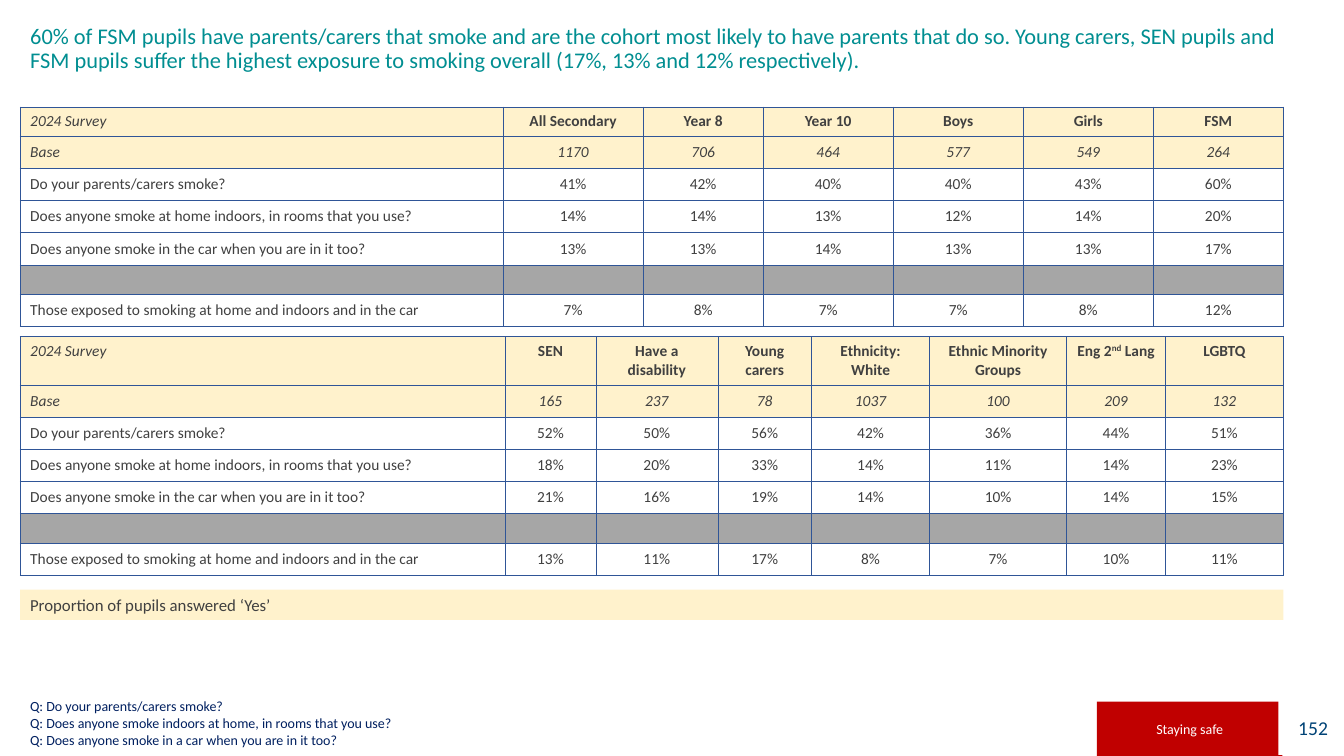
import pptx
import pptx.util
import pptx.dml.color
import pptx.enum.shapes
import pptx.enum.text
import pptx.oxml.ns
from lxml import etree

ALIGN = pptx.enum.text.PP_ALIGN
ANCHOR = pptx.enum.text.MSO_ANCHOR
qn = pptx.oxml.ns.qn
Inches = pptx.util.Inches

# Content
HEADLINE = ("60% of FSM pupils have parents/carers that smoke and are the cohort most likely to have "
            "parents that do so. Young carers, SEN pupils and FSM pupils suffer the highest exposure "
            "to smoking overall (17%, 13% and 12% respectively).")
ROW_LABELS = [
    "Base",
    "Do your parents/carers smoke?",
    "Does anyone smoke at home indoors, in rooms that you use?",
    "Does anyone smoke in the car when you are in it too?",
    None,  # grey separator row
    "Those exposed to smoking at home and indoors and in the car",
]
# Each column: heading, width, base, three answers, exposed overall
YEAR_GROUPS = [
    ("All Secondary", 1.39, 1170, 41, 14, 13, 7),
    ("Year 8", 1.19, 706, 42, 14, 13, 8),
    ("Year 10", 1.29, 464, 40, 13, 14, 7),
    ("Boys", 1.29, 577, 40, 12, 13, 7),
    ("Girls", 1.29, 549, 43, 14, 13, 8),
    ("FSM", 1.29, 264, 60, 20, 17, 12),
]
COHORTS = [
    ("SEN", 0.9, 165, 52, 18, 21, 13),
    ("Have a disability", 1.21, 237, 50, 20, 16, 11),
    ("Young carers", 0.93, 78, 56, 33, 19, 17),
    ("Ethnicity: White", 1.17, 1037, 42, 14, 14, 8),
    ("Ethnic Minority Groups", 1.36, 100, 36, 11, 10, 7),
    ("Eng 2^nd^ Lang", 0.98, 209, 44, 14, 14, 10),  # ^ marks superscript
    ("LGBTQ", 1.17, 132, 51, 23, 15, 11),
]
KEY = "Proportion of pupils answered ‘Yes’"
SECTION = "Staying safe"
PAGE = "152"
QUESTIONS = [
    "Q: Do your parents/carers smoke?",
    "Q: Does anyone smoke indoors at home, in rooms that you use?",
    "Q: Does anyone smoke in a car when you are in it too?",
]

# Layout and colours
SLIDE_W, SLIDE_H = 13.33, 7.5
LEFT, WIDTH = 0.2, 12.53
ROW_H, SEPARATOR_H = 0.32, 0.29
CREAM, GREY, BORDER, INK = "FFF2CC", "A6A6A6", "2F5597", "404040"


def colour(value):
    return pptx.dml.color.RGBColor.from_string(value)


def write(frame, lines, size, ink, align=ALIGN.LEFT, anchor=ANCHOR.TOP, bold=False, italic=False):
    frame.word_wrap = True
    frame.vertical_anchor = anchor
    for index, line in enumerate(lines):
        paragraph = frame.add_paragraph() if index else frame.paragraphs[0]
        paragraph.alignment = align
        for part, text in enumerate(line.split("^")):
            run = paragraph.add_run()
            run.text = text
            font = run.font
            font.name, font.size = "Calibri", pptx.util.Pt(size)
            font.bold, font.italic = bold, italic
            font.color.rgb = colour(ink)
            if part % 2:
                run._r.get_or_add_rPr().set("baseline", "30000")


def add_box(slide, box, fill):
    shape = slide.shapes.add_shape(pptx.enum.shapes.MSO_SHAPE.RECTANGLE, *map(Inches, box))
    shape.shadow.inherit = False
    shape.fill.solid()
    shape.fill.fore_color.rgb = colour(fill)
    shape.line.fill.background()
    return shape.text_frame


def add_borders(cell):
    properties = cell._tc.get_or_add_tcPr()
    for index, side in enumerate(("lnL", "lnR", "lnT", "lnB")):
        line = etree.Element(qn("a:" + side), w=str(pptx.util.Pt(0.5)))
        solid = etree.SubElement(line, qn("a:solidFill"))
        etree.SubElement(solid, qn("a:srgbClr"), val=BORDER)
        properties.insert(index, line)


def add_survey(slide, top, header_height, groups):
    rows = [["2024 Survey"] + [group[0] for group in groups]]
    answers = iter(range(3, 7))
    for label in ROW_LABELS:
        if label is None:
            rows.append([""] * (len(groups) + 1))
        elif label == "Base":
            rows.append([label] + [str(group[2]) for group in groups])
        else:
            answer = next(answers)
            rows.append([label] + [f"{group[answer]}%" for group in groups])

    separator = 1 + ROW_LABELS.index(None)
    heights = [header_height] + [ROW_H] * len(ROW_LABELS)
    heights[separator] = SEPARATOR_H
    group_widths = [group[1] for group in groups]
    widths = [WIDTH - sum(group_widths)] + group_widths

    table = slide.shapes.add_table(len(rows), len(widths), Inches(LEFT), Inches(top),
                                   Inches(WIDTH), Inches(sum(heights))).table
    table.first_row = table.horz_banding = False
    for column, width in zip(table.columns, widths):
        column.width = Inches(width)
    for r, (row, height) in enumerate(zip(rows, heights)):
        table.rows[r].height = Inches(height)
        for c, text in enumerate(row):
            cell = table.cell(r, c)
            if r < 2 or r == separator:
                cell.fill.solid()
                cell.fill.fore_color.rgb = colour(GREY if r == separator else CREAM)
            else:
                cell.fill.background()
            add_borders(cell)
            if text:
                write(cell.text_frame, [text], 11, INK, ALIGN.CENTER if c else ALIGN.LEFT,
                      bold=r == 0 and c > 0, italic=r == 1 or (r == 0 and c == 0))
                cell.vertical_anchor = ANCHOR.MIDDLE if r else ANCHOR.TOP
            else:
                # Keep the empty row as low as a line of table text
                etree.SubElement(cell.text_frame.paragraphs[0]._p, qn("a:endParaRPr"), sz="1100")


def main():
    deck = pptx.Presentation()
    deck.slide_width, deck.slide_height = Inches(SLIDE_W), Inches(SLIDE_H)
    slide = deck.slides.add_slide(deck.slide_layouts[5])

    # Headline
    headline = slide.shapes.title
    headline.left, headline.top, headline.width, headline.height = map(Inches, (LEFT, 0.2, 12.75, 0.98))
    headline.text_frame.auto_size = pptx.enum.text.MSO_AUTO_SIZE.NONE
    write(headline.text_frame, [HEADLINE], 16, "008E91")
    headline.text_frame.paragraphs[0].line_spacing = 0.9

    # Survey tables
    add_survey(slide, 1.06, 0.29, YEAR_GROUPS)
    add_survey(slide, 3.34, 0.47, COHORTS)

    # Key, section tag and page number
    write(add_box(slide, (LEFT, 5.85, WIDTH, 0.3), CREAM), [KEY], 12, INK)
    write(add_box(slide, (10.88, 6.96, 1.84, 0.54), "C00000"), [SECTION], 10, "FFFFFF",
          ALIGN.CENTER, ANCHOR.MIDDLE)
    write(add_box(slide, (12.68, 6.95, 0.59, 0.54), "FFFFFF"), [PAGE], 14, "004376",
          ALIGN.RIGHT, ANCHOR.MIDDLE)

    # Survey questions
    questions = slide.shapes.add_textbox(*map(Inches, (LEFT, 6.86, 10.6, 0.61)))
    write(questions.text_frame, QUESTIONS, 10, "002060", anchor=ANCHOR.BOTTOM)

    deck.save("out.pptx")


if __name__ == "__main__":
    main()
